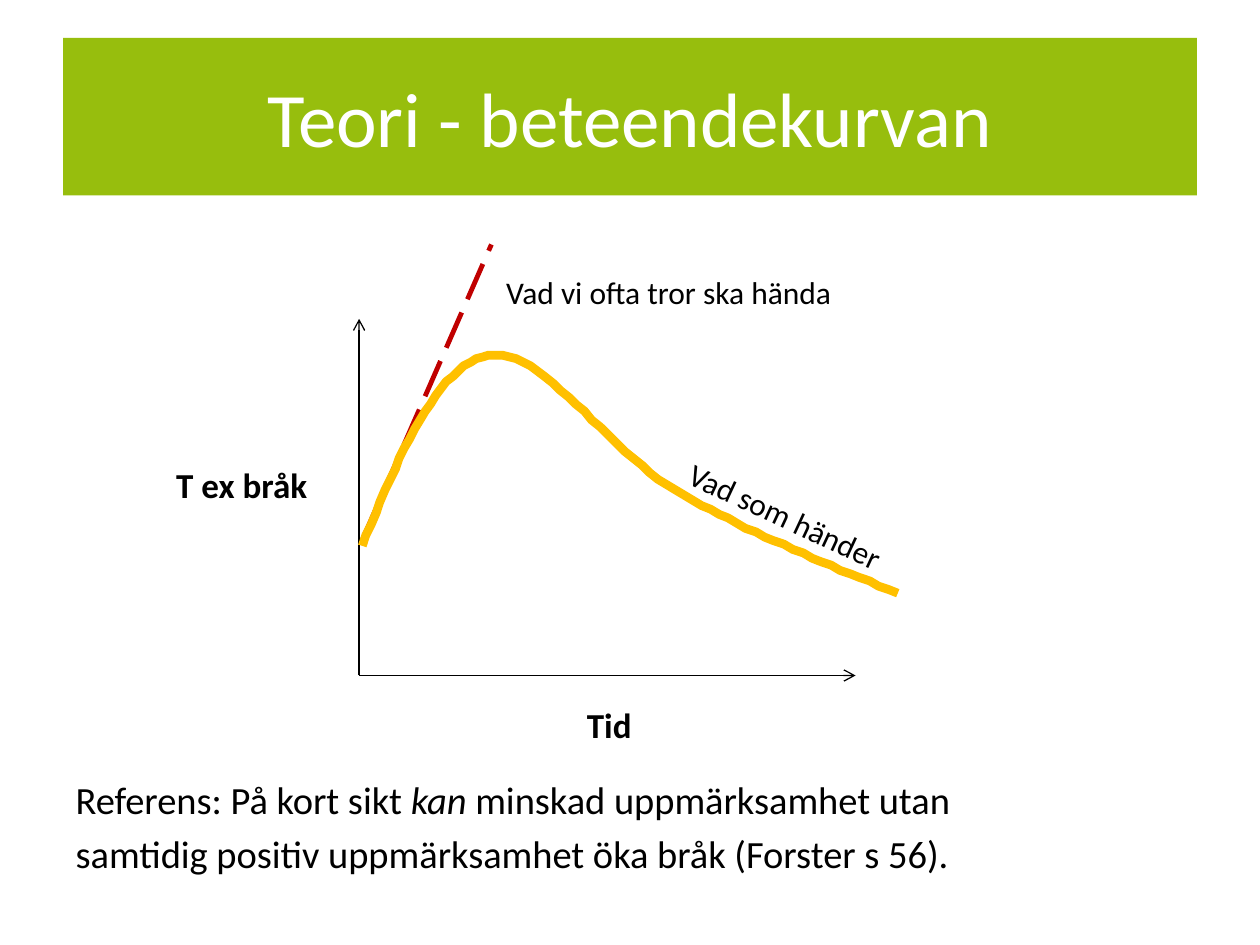
from lxml.etree import SubElement as Sub
from pptx import Presentation
from pptx.dml.color import RGBColor as RGB
from pptx.enum.dml import MSO_LINE as Dash
from pptx.enum.shapes import MSO_CONNECTOR as Conn
from pptx.enum.text import MSO_ANCHOR as Anchor, MSO_AUTO_SIZE as Fit, PP_ALIGN as Align
from pptx.oxml.ns import qn
from pptx.util import Pt

INK = {"green": "97BE0D", "red": "C00000", "gold": "FFC000",
       "black": "000000", "white": "FFFFFF"}


def style(run, ink="black", **form):
    """Set font values on a run."""
    for key, val in {"name": "Calibri", **form}.items():
        setattr(run.font, key, val)
    run.font.color.rgb = RGB.from_string(INK[ink])


def place(shape, box):
    for key, val in zip(("left", "top", "width", "height"), box):
        setattr(shape, key, Pt(val))


deck = Presentation()
deck.slide_width, deck.slide_height = Pt(720), Pt(540)
slide = deck.slides.add_slide(deck.slide_layouts[1])
shapes = slide.shapes

# Title band
title = shapes.title
place(title, (36, 21.6, 648, 90))
title.fill.solid()
title.fill.fore_color.rgb = RGB.from_string(INK["green"])
title.text_frame.vertical_anchor = Anchor.MIDDLE
para = title.text_frame.paragraphs[0]
para.alignment = Align.CENTER
run = para.add_run()
run.text = "Teori - beteendekurvan"
style(run, "white", size=Pt(44))

# Reference text: each run is (text, italic)
body = slide.placeholders[1]
place(body, (36, 440, 648, 67.5))
frame = body.text_frame
frame.auto_size = Fit.NONE
rows = [
    [("Referens: På kort sikt ", False), ("kan", True),
     (" minskad uppmärksamhet utan", False)],
    [("samtidig positiv uppmärksamhet öka bråk (Forster s 56).", False)],
]
for i, row in enumerate(rows):
    para = frame.add_paragraph() if i else frame.paragraphs[0]
    para.space_before = Pt(4.4)
    props = para._p.get_or_add_pPr()
    props.set("marL", str(Pt(27)))
    props.set("indent", str(Pt(-27)))
    Sub(props, qn("a:buNone"))
    for text, slant in row:
        run = para.add_run()
        run.text = text
        style(run, size=Pt(22), italic=slant)

# Expected course and the two axes
foot = (205.2, 386)
lines = [
    ((206.6, 309.6), (280.8, 139.7), "red", 2.75, Dash.LONG_DASH, False),
    (foot, (205.2, 182.2), "black", 0.75, None, True),
    (foot, (488.9, 386), "black", 0.75, None, True),
]
for start, end, ink, width, dash, arrow in lines:
    line = shapes.add_connector(Conn.STRAIGHT, *map(Pt, start + end))
    line.line.color.rgb = RGB.from_string(INK[ink])
    line.line.width = Pt(width)
    if dash:
        line.line.dash_style = dash
    if arrow:
        Sub(line.line._get_or_add_ln(), qn("a:tailEnd"), type="arrow")
    Sub(line._element.spPr, qn("a:effectLst"))

# Behaviour curve, traced along three cubic arcs
knots = [(206.6, 312.5), (228.2, 260.6), (249.8, 208.1), (279.4, 203),
         (308.9, 197.3), (347, 257), (385.9, 280.1),
         (424.8, 303.1), (469.4, 321.1), (513.4, 339.1)]
steps = 24
trace = []
for k in range(0, len(knots) - 1, 3):
    for n in range(1, steps + 1):
        t = n / steps
        parts = ((1 - t) ** 3, 3 * t * (1 - t) ** 2, 3 * t * t * (1 - t), t ** 3)
        trace.append(tuple(sum(w * p[axis] for w, p in zip(parts, knots[k:k + 4]))
                           for axis in (0, 1)))
pen = shapes.build_freeform(*knots[0], scale=Pt(1))
pen.add_line_segments(trace, close=False)
curve = pen.convert_to_shape()
curve.shadow.inherit = False
curve.fill.background()
curve.line.color.rgb = RGB.from_string(INK["gold"])
curve.line.width = Pt(5)

# Labels: text, box, size, bold, turn, wrap, fill
labels = [
    ("T ex bråk", (93.6, 261.4, 92.2, 31.5), 20, True, 0, True, None),
    ("Tid", (328.3, 398.2, 40.3, 31.5), 20, True, 0, False, None),
    ("Vad vi ofta tror ska hända", (282.2, 152.6, 203, 29), 18, False, 0, False, "white"),
    ("Vad som händer", (382.3, 280.8, 134.6, 29), 18, False, 25, False, None),
]
for text, box, size, bold, turn, wrap, fill in labels:
    label = shapes.add_textbox(*map(Pt, box))
    label.rotation = turn
    if fill:
        label.fill.solid()
        label.fill.fore_color.rgb = RGB.from_string(INK[fill])
    label.text_frame.word_wrap = wrap
    label.text_frame.auto_size = Fit.SHAPE_TO_FIT_TEXT
    run = label.text_frame.paragraphs[0].add_run()
    run.text = text
    style(run, size=Pt(size), bold=bold)

deck.save("out.pptx")
